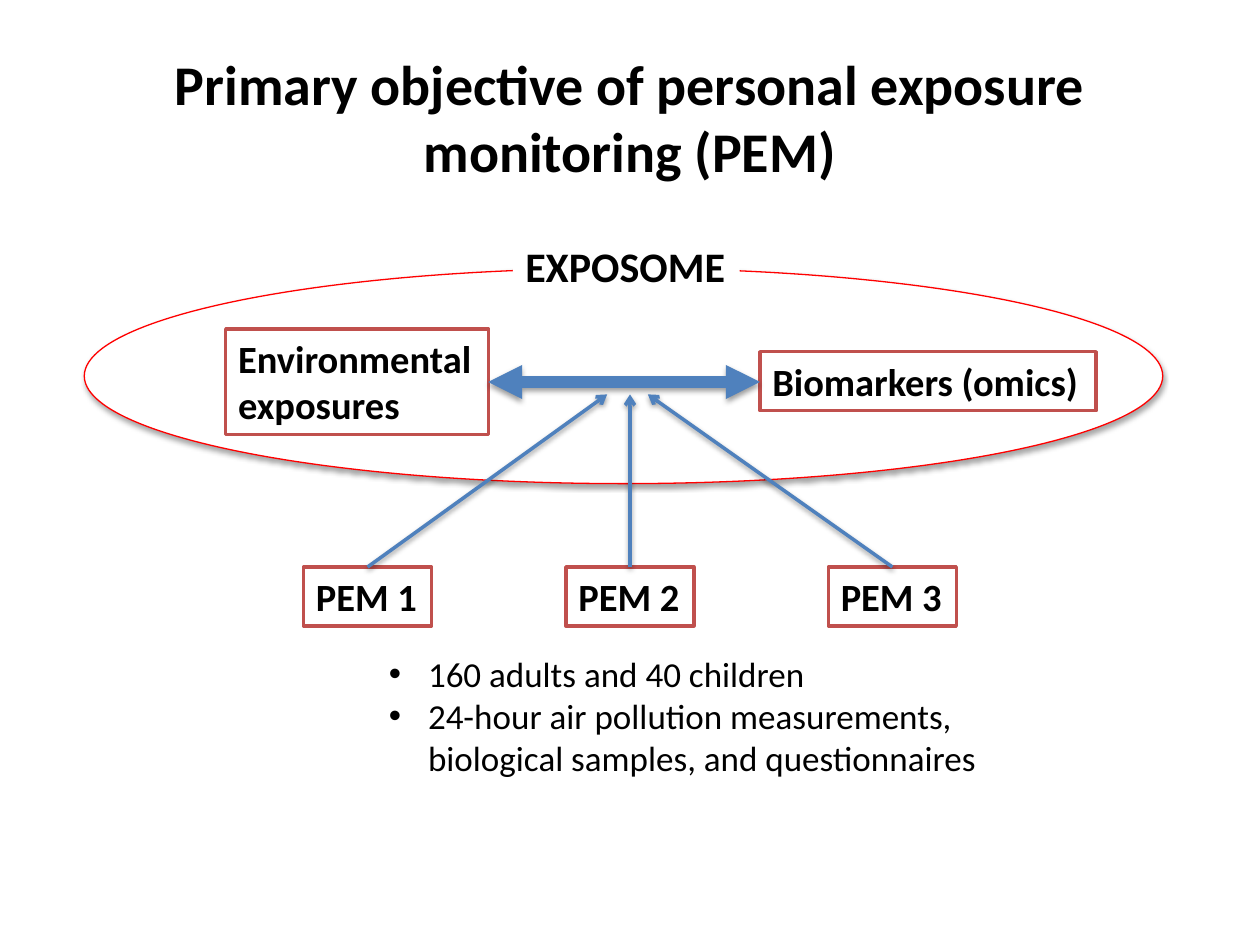
from lxml.etree import SubElement
from pptx import Presentation
from pptx.dml.color import RGBColor
from pptx.enum.shapes import MSO_CONNECTOR as Connector, MSO_SHAPE as Shape
from pptx.enum.text import MSO_ANCHOR as Anchor, MSO_AUTO_SIZE as AutoSize, PP_ALIGN as Align
from pptx.oxml.ns import qn
from pptx.util import Cm, Pt

BLACK = RGBColor(0x00, 0x00, 0x00)
WHITE = RGBColor(0xFF, 0xFF, 0xFF)
RED = RGBColor(0xFF, 0x00, 0x00)
BRICK = RGBColor(0xC0, 0x50, 0x4D)
BLUE = RGBColor(0x4F, 0x81, 0xBD)

PEM_LEFT, PEM_TOP, PEM_STEP = 6.12, 11.43, 5.29
PEM_WIDTH, PEM_HEIGHT = 2.58, 1.19
ARROW_TIPS = (12.24, 12.7, 13.06)
TIP_Y = 7.95


def set_attributes(target, values):
    """Set each named attribute of the target."""
    for name, value in values.items():
        setattr(target, name, value)


def place(shape, left, top, width, height):
    """Position a shape in centimetres."""
    set_attributes(shape, {"left": Cm(left), "top": Cm(top),
                           "width": Cm(width), "height": Cm(height)})


def write(frame, lines, size, bold=True, align=Align.LEFT):
    """Write one paragraph per line and return the paragraphs."""
    paras = []
    for index, line in enumerate(lines):
        para = frame.add_paragraph() if index else frame.paragraphs[0]
        para.alignment = align
        span = para.add_run()
        span.text = line
        set_attributes(span.font, {"name": "Calibri", "size": Pt(size), "bold": bold})
        span.font.color.rgb = BLACK
        paras.append(para)
    return paras


def add_shadow(shape, opacity, distance):
    """Give a shape a soft shadow straight below it."""
    effects = SubElement(shape._element.spPr, qn("a:effectLst"))
    outer = SubElement(effects, qn("a:outerShdw"), blurRad=str(Pt(3.1)),
                       dist=str(Pt(distance)), dir="5400000", rotWithShape="0")
    color = SubElement(outer, qn("a:srgbClr"), val=str(BLACK))
    SubElement(color, qn("a:alpha"), val=str(opacity * 1000))


def add_outline(page, kind, box, line_color=None, line_width=0.75):
    """Add a white shape with an optional outline."""
    shape = page.shapes.add_shape(kind, *map(Cm, box))
    shape.fill.solid()
    shape.fill.fore_color.rgb = WHITE
    if line_color is None:
        shape.line.fill.background()
    else:
        shape.line.color.rgb = line_color
        shape.line.width = Pt(line_width)
    return shape


def add_label(page, box, lines, size=22, line_color=BRICK):
    """Add a rectangle with bold text."""
    label = add_outline(page, Shape.RECTANGLE, box, line_color, 2)
    label.shadow.inherit = False
    set_attributes(label.text_frame, {"word_wrap": False, "vertical_anchor": Anchor.TOP,
                                      "auto_size": AutoSize.SHAPE_TO_FIT_TEXT})
    write(label.text_frame, lines, size)


def add_arrow(page, start, end, width, **tips):
    """Add a blue line with the given arrowheads."""
    arrow = page.shapes.add_connector(Connector.STRAIGHT, *map(Cm, start + end))
    arrow.line.color.rgb = BLUE
    arrow.line.width = Pt(width)
    for tag, kind in tips.items():
        SubElement(arrow.line._get_or_add_ln(), qn(f"a:{tag}"), type=kind)
    add_shadow(arrow, 38, 1.6)


def add_bullets(page, box, lines):
    """Add a bulleted text box."""
    frame = page.shapes.add_textbox(*map(Cm, box)).text_frame
    set_attributes(frame, {"word_wrap": True, "auto_size": AutoSize.SHAPE_TO_FIT_TEXT})
    for para in write(frame, lines, 20, bold=False):
        props = para._p.get_or_add_pPr()
        props.set("marL", str(Cm(0.79)))
        props.set("indent", str(-Cm(0.79)))
        SubElement(props, qn("a:buFont"), typeface="Arial")
        SubElement(props, qn("a:buChar"), char="•")


def add_title(page, text):
    """Place and format the title."""
    title = page.shapes.title
    place(title, 1.27, 0.76, 22.86, 3.18)
    set_attributes(title.text_frame, {"word_wrap": True, "vertical_anchor": Anchor.MIDDLE})
    write(title.text_frame, [text], 32, align=Align.CENTER)


def main():
    """Build the exposure monitoring slide."""
    deck = Presentation()
    set_attributes(deck, {"slide_width": Cm(25.4), "slide_height": Cm(19.05)})
    page = deck.slides.add_slide(deck.slide_layouts[5])
    add_title(page, "Primary objective of personal exposure monitoring (PEM)")

    exposome = add_outline(page, Shape.OVAL, (1.7, 5.41, 21.74, 4.34), RED)
    add_shadow(exposome, 35, 1.8)
    add_label(page, (4.55, 6.63, 5.3, 2.13), ["Environmental", "exposures"])
    add_label(page, (15.32, 7.09, 6.78, 1.19), ["Biomarkers (omics)"])
    add_arrow(page, (9.84, 7.7), (15.32, 7.7), 6.5, headEnd="triangle", tailEnd="triangle")
    add_label(page, (10.34, 4.72, 4.57, 1.27), ["EXPOSOME"], 24, None)

    for index, tip in enumerate(ARROW_TIPS):
        left = PEM_LEFT + index * PEM_STEP
        add_label(page, (left, PEM_TOP, PEM_WIDTH, PEM_HEIGHT), [f"PEM {index + 1}"])
        add_arrow(page, (left + PEM_WIDTH / 2, PEM_TOP), (tip, TIP_Y), 2, tailEnd="arrow")

    add_bullets(page, (7.59, 13.03, 14.68, 2.82), [
        "160 adults and 40 children",
        "24-hour air pollution measurements, biological samples, and questionnaires",
    ])
    deck.save("out.pptx")


if __name__ == "__main__":
    main()
